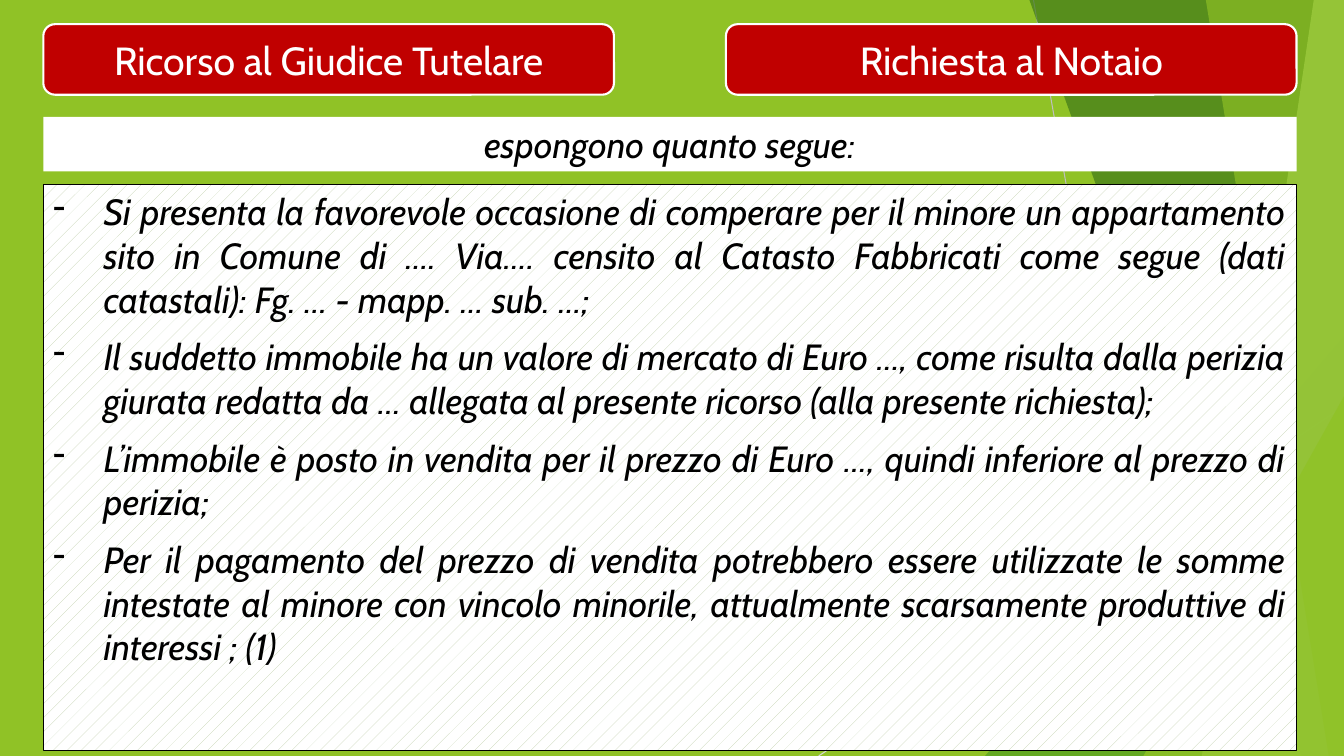
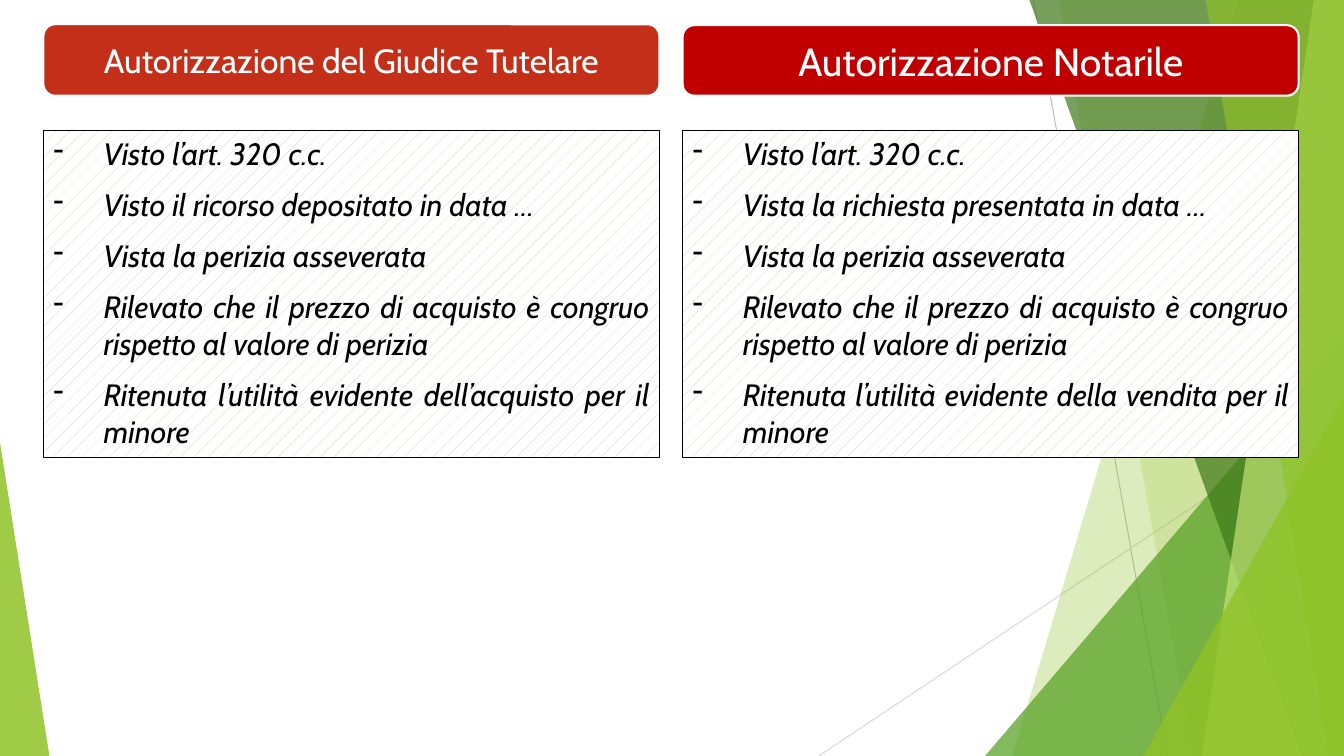
from lxml import etree
from pptx import Presentation
from pptx.dml.color import RGBColor
from pptx.enum.dml import MSO_PATTERN
from pptx.enum.shapes import MSO_CONNECTOR, MSO_SHAPE
from pptx.enum.text import MSO_ANCHOR, PP_ALIGN
from pptx.oxml.ns import qn
from pptx.util import Inches, Pt

STRAIGHT = MSO_CONNECTOR.STRAIGHT
RECTANGLE, ROUNDED = MSO_SHAPE.RECTANGLE, MSO_SHAPE.ROUNDED_RECTANGLE
TRIANGLE = MSO_SHAPE.ISOSCELES_TRIANGLE
DOTTED = MSO_PATTERN.PERCENT_5
TOP, MIDDLE = MSO_ANCHOR.TOP, MSO_ANCHOR.MIDDLE
CENTER, JUSTIFY = PP_ALIGN.CENTER, PP_ALIGN.JUSTIFY

WHITE = RGBColor(0xFF, 0xFF, 0xFF)
BLACK = RGBColor(0x00, 0x00, 0x00)
RED = RGBColor(0xC0, 0x00, 0x00)
BRICK = RGBColor(0xC4, 0x2F, 0x1A)
LIME = RGBColor(0x90, 0xC2, 0x26)
PALE_LIME = RGBColor(0xC0, 0xE4, 0x74)
GREEN = RGBColor(0x54, 0xA0, 0x21)
DARK_GREEN = RGBColor(0x3F, 0x78, 0x19)
SAGE = RGBColor(0xC0, 0xCF, 0xAA)
GREY = RGBColor(0xBF, 0xBF, 0xBF)
LIGHT_GREY = RGBColor(0xD9, 0xD9, 0xD9)

WIDTH, HEIGHT = 13.33, 7.5
MARGIN = 0.43
HEADER_FORMAT = {"name": "Cabin", "italic": False}
BODY_FORMAT = {"name": "Cabin", "italic": True}


def add_panel(slide, kind, box, fill, outline=None, weight=0.75):
    panel = slide.shapes.add_shape(kind, *map(Inches, box))
    panel.shadow.inherit = False
    if fill is None:
        panel.fill.patterned()
        panel.fill.pattern = DOTTED
        panel.fill.fore_color.rgb = SAGE
        panel.fill.back_color.rgb = WHITE
    else:
        panel.fill.solid()
        panel.fill.fore_color.rgb = fill
    if outline is None:
        panel.line.fill.background()
    else:
        panel.line.color.rgb = outline
        panel.line.width = Pt(weight)
    return panel


def write(panel, texts, size, color, font_format, anchor, align, before=0, dashed=False):
    frame = panel.text_frame
    frame.word_wrap = True
    frame.vertical_anchor = anchor
    for index, text in enumerate(texts):
        paragraph = frame.add_paragraph() if index else frame.paragraphs[0]
        paragraph.alignment = align
        paragraph.space_before = Pt(before)
        if dashed:
            properties = paragraph._p.get_or_add_pPr()
            properties.set("marL", str(Inches(0.5)))
            properties.set("indent", str(Inches(-0.5)))
            etree.SubElement(properties, qn("a:buChar"), char="-")
        run = paragraph.add_run()
        run.text = text
        for attribute, value in font_format.items():
            setattr(run.font, attribute, value)
        run.font.size = Pt(size)
        run.font.color.rgb = color


deck = Presentation()
deck.slide_width, deck.slide_height = Inches(WIDTH), Inches(HEIGHT)
layout = deck.slide_layouts[6]
for placeholder in list(layout.placeholders):
    placeholder.element.getparent().remove(placeholder.element)

request = deck.slides.add_slide(layout)
authorization = deck.slides.add_slide(layout)

rays = [((10.25, 0), (11.58, HEIGHT), GREY), ((WIDTH, 4.03), (8.12, HEIGHT), LIGHT_GREY)]
for start, end, color in rays:
    ray = request.shapes.add_connector(STRAIGHT, *map(Inches, start + end))
    ray.line.color.rgb = color
    ray.line.width = Pt(0.75)
    etree.SubElement(ray.element.spPr, qn("a:effectLst"))

BAND, WEDGE = "band", "wedge"
facets = [
    (BAND, (12.28, 10.04), LIME, 30),
    (BAND, (10.5, 11.83), LIME, 20),
    (WEDGE, (9.77, 3.33, 3.56, 1), GREEN, 72),
    (BAND, (10.21, 12.91), DARK_GREEN, 70),
    (BAND, (13.03, 11.92), PALE_LIME, 70),
    (BAND, (11.96, 13.18), LIME, 65),
    (WEDGE, (11.34, 3.93, 1.99, 1), LIME, 80),
    (WEDGE, (0, 4.39, 0.49, 0), LIME, 85),
]
for kind, geometry, color, opacity in facets:
    if kind == BAND:
        upper, lower = geometry
        outline = request.shapes.build_freeform(Inches(upper), 0)
        corners = [(WIDTH, 0), (WIDTH, HEIGHT), (lower, HEIGHT)]
        outline.add_line_segments([(Inches(x), Inches(y)) for x, y in corners])
        facet = outline.convert_to_shape()
        facet.shadow.inherit = False
        facet.fill.solid()
        facet.fill.fore_color.rgb = color
        facet.line.fill.background()
    else:
        left, top, width, apex = geometry
        facet = add_panel(request, TRIANGLE, (left, top, width, HEIGHT - top), color)
        facet.adjustments[0] = apex
    tint = facet.element.spPr.find(qn("a:solidFill"))[0]
    etree.SubElement(tint, qn("a:alpha"), val=str(opacity * 1000))

for decoration in list(request.shapes):
    layout.element.cSld.spTree.append(decoration.element)

for slide, color in [(request, LIME), (authorization, WHITE)]:
    slide.background.fill.solid()
    slide.background.fill.fore_color.rgb = color

introduction = add_panel(request, RECTANGLE, (MARGIN, 1.16, 12.43, 0.54), WHITE)
write(introduction, ["espongono quanto segue:"], 26, BLACK, BODY_FORMAT, TOP, CENTER, 10)

clauses = [
    (request, (MARGIN, 1.83, 12.43, 5.62), 26, [
        "Si presenta la favorevole occasione di comperare per il minore un appartamento "
        "sito in Comune di …. Via…. censito al Catasto Fabbricati come segue "
        "(dati catastali): Fg. … - mapp. … sub. …;",
        "Il suddetto immobile ha un valore di mercato di Euro …, come risulta dalla "
        "perizia giurata redatta da … allegata al presente ricorso (alla presente richiesta);",
        "L’immobile è posto in vendita per il prezzo di Euro …, quindi inferiore al "
        "prezzo di perizia;",
        "Per il pagamento del prezzo di vendita potrebbero essere utilizzate le somme "
        "intestate al minore con vincolo minorile, attualmente scarsamente produttive "
        "di interessi ; (1)",
    ]),
]
grounds = [
    (MARGIN, "Visto il ricorso depositato", "dell’acquisto"),
    (6.77, "Vista la richiesta presentata", "della vendita"),
]
for left, filing, purpose in grounds:
    clauses.append((authorization, (left, 1.29, 6.11, 3.25), 22, [
        "Visto l’art. 320 c.c.",
        f"{filing} in data …",
        "Vista la perizia asseverata",
        "Rilevato che il prezzo di acquisto è congruo rispetto al valore di perizia",
        f"Ritenuta l’utilità evidente {purpose} per il minore",
    ]))
for slide, box, size, texts in clauses:
    clause = add_panel(slide, RECTANGLE, box, None, BLACK)
    write(clause, texts, size, BLACK, BODY_FORMAT, TOP, JUSTIFY, 10, True)

headers = [
    (request, (MARGIN, 0.24, 5.66, 0.7), RED, 28, "Ricorso al Giudice Tutelare"),
    (request, (7.2, 0.24, 5.66, 0.7), RED, 28, "Richiesta al Notaio"),
    (authorization, (MARGIN, 0.24, 6.11, 0.71), BRICK, 24, "Autorizzazione del Giudice Tutelare"),
    (authorization, (6.77, 0.25, 6.11, 0.7), RED, 28, "Autorizzazione Notarile"),
]
for slide, box, color, size, text in headers:
    header = add_panel(slide, ROUNDED, box, color, WHITE, 1.5)
    write(header, [text], size, WHITE, HEADER_FORMAT, MIDDLE, CENTER)

deck.save("out.pptx")
